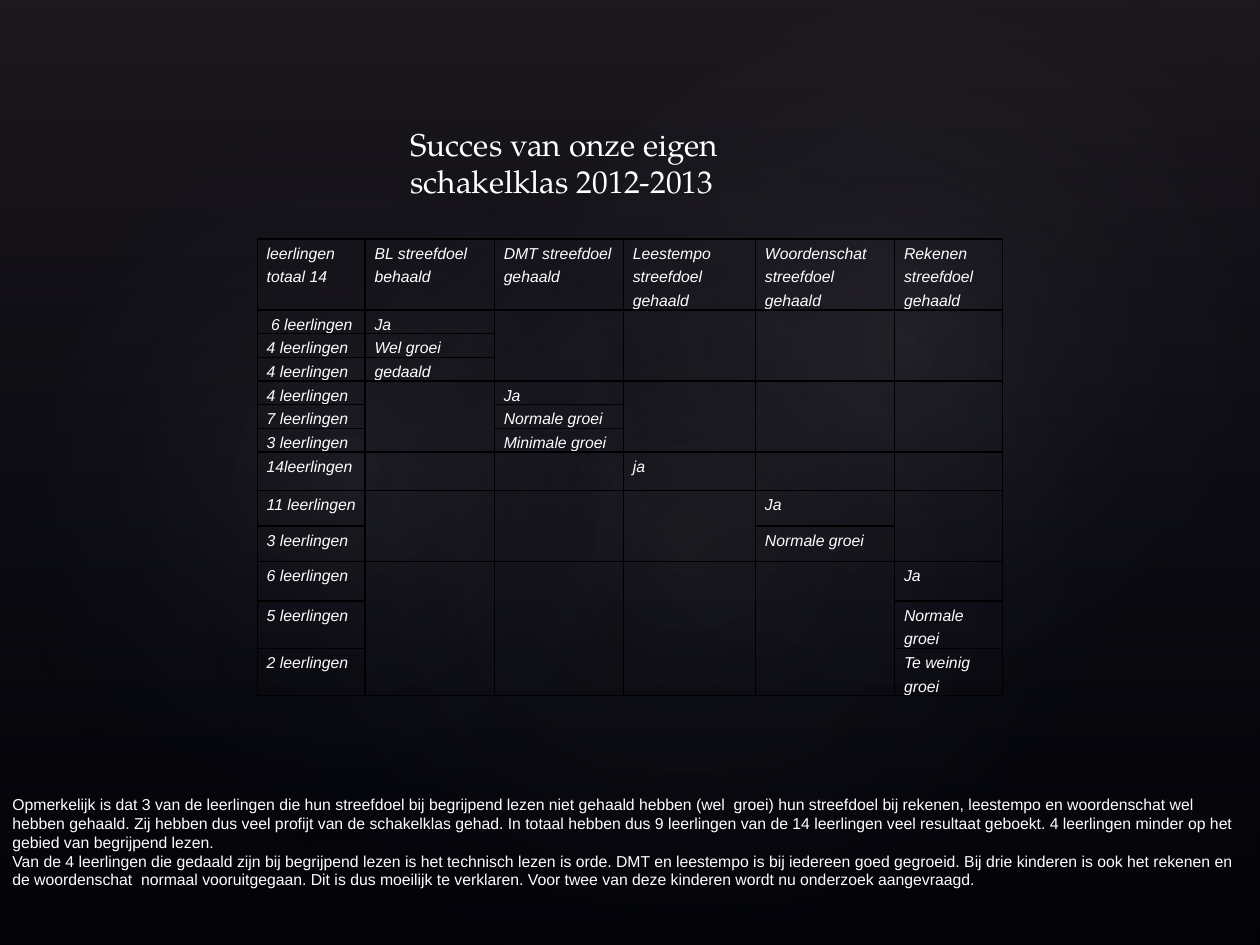
from dataclasses import dataclass

from lxml.etree import SubElement
from pptx import Presentation
from pptx.dml.color import RGBColor
from pptx.enum.shapes import MSO_SHAPE as Shape
from pptx.enum.text import MSO_ANCHOR as Anchor
from pptx.oxml import parse_xml
from pptx.oxml.ns import nsdecls, qn
from pptx.util import Pt


@dataclass(frozen=True)
class Theme:
    page: str = "000000"
    text: str = "FFFFFF"
    border: str = "000000"
    haze: str = "504652"
    navy: str = "242852"
    glow: str = "C4BCC6"
    title_font: str = "TeX Gyre Pagella"
    body_font: str = "Arial"
    title_size: float = 18
    body_size: float = 9
    line_pitch: float = 13.5
    border_width: float = 1


THEME = Theme()
WIDTH, HEIGHT = 720, 540

# Content
TITLE = "Succes van onze eigen schakelklas 2012-2013"
HEADERS = [
    ["leerlingen totaal 14"],
    ["BL streefdoel", "behaald"],
    ["DMT streefdoel", "gehaald"],
    ["Leestempo streefdoel gehaald"],
    ["Woordenschat streefdoel gehaald"],
    ["Rekenen streefdoel gehaald"],
]
# One group per goal column, in column order: (pupils, result, row height)
GROUPS = [
    [(" 6 leerlingen", "Ja", 13.5), ("4 leerlingen", "Wel groei", 13.5),
     ("4 leerlingen", "gedaald", 13.5)],
    [("4 leerlingen", "Ja", 13.5), ("7 leerlingen", "Normale groei", 13.5),
     ("3 leerlingen", "Minimale groei", 13.5)],
    [("14leerlingen", "ja", 13.5)],
    [("11 leerlingen", "Ja", 20.4), ("3 leerlingen", "Normale groei", 20.4)],
    [("6 leerlingen", "Ja", 22.5), ("5 leerlingen", "Normale groei", 27),
     ("2 leerlingen", "Te weinig groei", 27)],
]
NOTES = [
    "Opmerkelijk is dat 3 van de leerlingen die hun streefdoel bij begrijpend lezen "
    "niet gehaald hebben (wel  groei) hun streefdoel bij rekenen, leestempo en "
    "woordenschat wel hebben gehaald. Zij hebben dus veel profijt van de schakelklas "
    "gehad. In totaal hebben dus 9 leerlingen van de 14 leerlingen veel resultaat "
    "geboekt. 4 leerlingen minder op het gebied van begrijpend lezen.",
    "Van de 4 leerlingen die gedaald zijn bij begrijpend lezen is het technisch lezen "
    "is orde. DMT en leestempo is bij iedereen goed gegroeid. Bij drie kinderen is ook "
    "het rekenen en de woordenschat  normaal vooruitgegaan. Dit is dus moeilijk te "
    "verklaren. Voor twee van deze kinderen wordt nu onderzoek aangevraagd.",
]

# Layout: left, top, width, height
TITLE_BOX = (227.5, 67.7, 264.2, 51.1)
NOTES_BOX = (0, 450, WIDTH, 62)
TABLE_AT = (147, 136.6)
COLUMN_WIDTHS = [61.7, 73.8, 73.8, 75.5, 79.5, 61.7]
HEADER_HEIGHT = 40.5
# Glows: box, rotation, opacity at the centre
GLOWS = [
    ((108, 82.1, 570.2, 449.3), 328.7, 7),
    ((-21.6, 92.2, 436.3, 352.8), 294.3, 8),
    ((257.8, 9.4, 510.5, 374.4), 328.7, 8),
]
LINEAR = '<a:lin ang="5400000" scaled="0"/>'
RADIAL = ('<a:path path="circle"><a:fillToRect l="50000" t="50000" '
          'r="50000" b="50000"/></a:path>')


def add_backdrop(page, kind, frame, stops, direction, rotation=0):
    """Add a borderless shape with a see-through gradient."""
    shape = page.shapes.add_shape(kind, *map(Pt, frame))
    shape.shadow.inherit = False
    shape.line.fill.background()
    shape.rotation = rotation
    shape.fill.background()
    marks = "".join(
        f'<a:gs pos="{place * 1000}"><a:srgbClr val="{color}">'
        f'<a:alpha val="{opacity * 1000}"/></a:srgbClr></a:gs>'
        for place, color, opacity in stops)
    gradient = parse_xml(f'<a:gradFill {nsdecls("a")} rotWithShape="1">'
                         f'<a:gsLst>{marks}</a:gsLst>{direction}</a:gradFill>')
    properties = shape.element.spPr
    properties.replace(properties.find(qn("a:noFill")), gradient)


def write(frame, paragraphs, font, size, italic=False, pitch=None):
    for index, text in enumerate(paragraphs):
        para = frame.paragraphs[0] if index == 0 else frame.add_paragraph()
        if pitch:
            para.line_spacing = Pt(pitch)
        if not text:
            continue
        span = para.add_run()
        span.text = text
        span.font.name = font
        span.font.size = Pt(size)
        span.font.italic = italic
        span.font.color.rgb = RGBColor.from_string(THEME.text)


def add_text(page, frame, paragraphs, font, size, anchor=Anchor.TOP):
    box = page.shapes.add_textbox(*map(Pt, frame)).text_frame
    box.word_wrap = True
    box.vertical_anchor = anchor
    write(box, paragraphs, font, size)


def style_cell(cell):
    cell.margin_left = cell.margin_right = Pt(5.4)
    cell.margin_top = cell.margin_bottom = 0
    properties = cell._tc.get_or_add_tcPr()
    for side in ("lnL", "lnR", "lnT", "lnB"):
        line = SubElement(properties, qn(f"a:{side}"), w=str(Pt(THEME.border_width)))
        SubElement(SubElement(line, qn("a:solidFill")), qn("a:srgbClr"),
                   val=THEME.border)
    cell.fill.background()


def add_results(page):
    # Each group fills the pupil column and its own goal column
    rows, heights, merges = [HEADERS], [HEADER_HEIGHT], []
    for goal, group in enumerate(GROUPS, start=1):
        first = len(rows)
        for pupils, result, height in group:
            row = [[""] for _ in HEADERS]
            row[0], row[goal] = [pupils], [result]
            rows.append(row)
            heights.append(height)
        if len(group) > 1:
            merges += [(first, len(rows) - 1, column)
                       for column in range(1, len(HEADERS)) if column != goal]

    table = page.shapes.add_table(
        len(rows), len(HEADERS), *map(Pt, TABLE_AT),
        Pt(sum(COLUMN_WIDTHS)), Pt(sum(heights))).table
    table.first_row = table.horz_banding = False
    for column, width in zip(table.columns, COLUMN_WIDTHS):
        column.width = Pt(width)
    for r, (row, height) in enumerate(zip(rows, heights)):
        table.rows[r].height = Pt(height)
        for c, paragraphs in enumerate(row):
            cell = table.cell(r, c)
            style_cell(cell)
            write(cell.text_frame, paragraphs, THEME.body_font, THEME.body_size,
                  italic=True, pitch=THEME.line_pitch)
    for first, last, column in merges:
        table.cell(first, column).merge(table.cell(last, column))


def main():
    deck = Presentation()
    deck.slide_width, deck.slide_height = Pt(WIDTH), Pt(HEIGHT)
    page = deck.slides.add_slide(deck.slide_layouts[6])

    # Background
    page.background.fill.solid()
    page.background.fill.fore_color.rgb = RGBColor.from_string(THEME.page)
    add_backdrop(page, Shape.RECTANGLE, (0, 0, WIDTH, HEIGHT),
                 [(0, THEME.haze, 36), (100, THEME.navy, 10)], LINEAR)
    for frame, rotation, opacity in GLOWS:
        add_backdrop(page, Shape.OVAL, frame,
                     [(0, THEME.glow, opacity), (58, THEME.navy, 0)],
                     RADIAL, rotation)

    # Table, title and remarks
    add_results(page)
    add_text(page, TITLE_BOX, [TITLE], THEME.title_font, THEME.title_size)
    add_text(page, NOTES_BOX, NOTES, THEME.body_font, THEME.body_size, Anchor.MIDDLE)

    deck.save("out.pptx")


if __name__ == "__main__":
    main()
